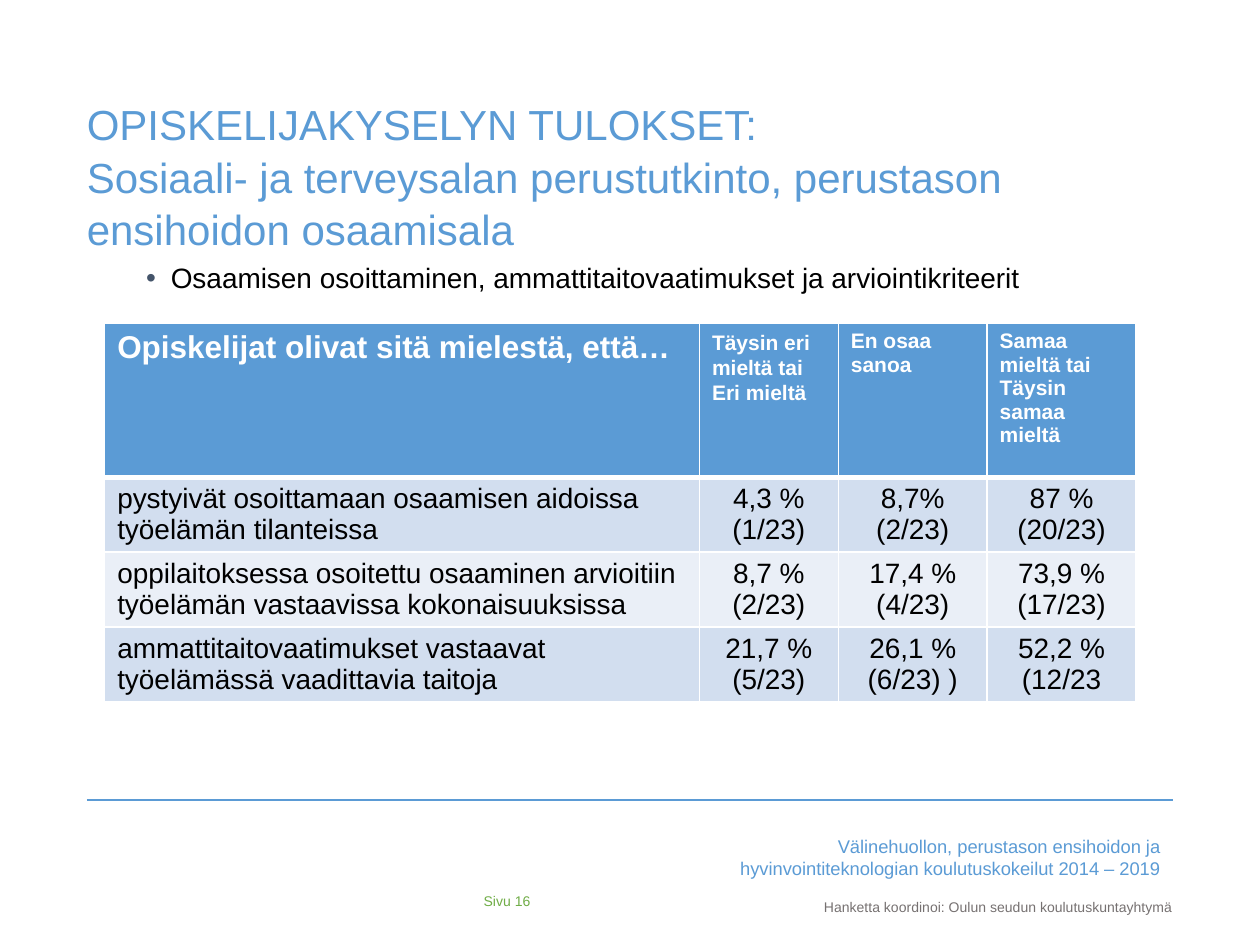
from lxml import etree
from pptx import Presentation
from pptx.dml.color import RGBColor
from pptx.enum.shapes import MSO_CONNECTOR
from pptx.enum.text import MSO_ANCHOR, MSO_AUTO_SIZE, PP_ALIGN
from pptx.oxml.ns import qn
from pptx.util import Cm, Pt

LEFT, CENTER, RIGHT = PP_ALIGN.LEFT, PP_ALIGN.CENTER, PP_ALIGN.RIGHT
TOP, MIDDLE = MSO_ANCHOR.TOP, MSO_ANCHOR.MIDDLE
STRAIGHT = MSO_CONNECTOR.STRAIGHT
NO_AUTOFIT = MSO_AUTO_SIZE.NONE

BLUE = RGBColor(0x5B, 0x9B, 0xD5)
BAND_DARK = RGBColor(0xD2, 0xDE, 0xEF)
BAND_LIGHT = RGBColor(0xEA, 0xEF, 0xF7)
BULLET_COLOR = RGBColor(0x44, 0x54, 0x6A)
GREEN = RGBColor(0x70, 0xAD, 0x47)
GREY = RGBColor(0x76, 0x71, 0x71)
BLACK = RGBColor(0, 0, 0)
WHITE = RGBColor(0xFF, 0xFF, 0xFF)

COLUMN_WIDTHS = (11.99, 2.8, 3, 3)
HEADER_HEIGHT, ROW_HEIGHT = 3.1, 1.51
HEADERS = (
    ["Opiskelijat olivat sitä mielestä, että…"],
    ["Täysin eri mieltä tai", "Eri mieltä"],
    ["En osaa sanoa"],
    ["Samaa mieltä tai Täysin samaa mieltä"],
)
ROWS = (
    ("pystyivät osoittamaan osaamisen aidoissa työelämän tilanteissa",
     "4,3 % (1/23)", "8,7% (2/23)", "87 % (20/23)"),
    ("oppilaitoksessa osoitettu osaaminen arvioitiin työelämän vastaavissa kokonaisuuksissa",
     "8,7 % (2/23)", "17,4 % (4/23)", "73,9 % (17/23)"),
    ("ammattitaitovaatimukset vastaavat työelämässä vaadittavia taitoja",
     "21,7 % (5/23)", "26,1 % (6/23) )", "52,2 % (12/23"),
)


def write_text(text_frame, *texts, size, color, bold=False, align=LEFT, spacing=1.0):
    """Write one paragraph per text, all in the same format."""
    for index, text in enumerate(texts):
        paragraph = text_frame.add_paragraph() if index else text_frame.paragraphs[0]
        paragraph.text = text
        paragraph.alignment = align
        paragraph.line_spacing = spacing
        paragraph.space_before = Pt(0)
        for run in paragraph.runs:
            run.font.name = "Arial"
            run.font.size = Pt(size)
            run.font.bold = bold
            run.font.color.rgb = color


def set_frame(text_frame, inset=None, anchor=TOP, wrap=True):
    text_frame.auto_size = NO_AUTOFIT
    text_frame.word_wrap = wrap
    text_frame.vertical_anchor = anchor
    if inset is not None:
        text_frame.margin_left = text_frame.margin_right = Cm(inset)
        text_frame.margin_top = text_frame.margin_bottom = Cm(inset)


def place(shape, left, top, width, height):
    shape.left, shape.top = Cm(left), Cm(top)
    shape.width, shape.height = Cm(width), Cm(height)


def add_label(slide, text, left, top, width, height, inset=None, anchor=TOP, wrap=True, **text_format):
    shape = slide.shapes.add_textbox(Cm(left), Cm(top), Cm(width), Cm(height))
    set_frame(shape.text_frame, inset, anchor, wrap)
    write_text(shape.text_frame, text, **text_format)


def add_rule(slide, left, right, top):
    line = slide.shapes.add_connector(STRAIGHT, Cm(left), Cm(top), Cm(right), Cm(top))
    line.line.color.rgb = BLUE
    line.line.width = Pt(1)
    etree.SubElement(line._element.spPr, qn("a:effectLst"))


def set_bullet(paragraph, character, color, indent):
    properties = paragraph._p.get_or_add_pPr()
    properties.set("marL", str(Cm(indent)))
    properties.set("indent", str(-Cm(indent)))
    bullet_color = etree.SubElement(properties, qn("a:buClr"))
    etree.SubElement(bullet_color, qn("a:srgbClr"), val=str(color))
    etree.SubElement(properties, qn("a:buFont"), typeface="Arial")
    etree.SubElement(properties, qn("a:buChar"), char=character)


def style_cell(cell, fill, top=1, bottom=1):
    """Give a cell white borders, widths in points, and a plain fill."""
    properties = cell._tc.get_or_add_tcPr()
    for side, width in (("L", 1), ("R", 1), ("T", top), ("B", bottom)):
        border = etree.SubElement(properties, qn(f"a:ln{side}"), w=str(Pt(width)))
        solid = etree.SubElement(border, qn("a:solidFill"))
        etree.SubElement(solid, qn("a:srgbClr"), val=str(WHITE))
    cell.fill.solid()
    cell.fill.fore_color.rgb = fill


def add_results_table(slide, left, top):
    height = HEADER_HEIGHT + ROW_HEIGHT * len(ROWS)
    table = slide.shapes.add_table(len(ROWS) + 1, len(HEADERS), Cm(left), Cm(top),
                                   Cm(sum(COLUMN_WIDTHS)), Cm(height)).table
    for column, width in zip(table.columns, COLUMN_WIDTHS):
        column.width = Cm(width)

    # Header row
    table.rows[0].height = Cm(HEADER_HEIGHT)
    for column, texts in enumerate(HEADERS):
        cell = table.cell(0, column)
        style_cell(cell, BLUE, bottom=3)
        write_text(cell.text_frame, *texts, size=12 if column else 18, color=WHITE,
                   bold=True, spacing=1.07 if len(texts) > 1 else 1.0)

    # Banded result rows
    for row, values in enumerate(ROWS, start=1):
        table.rows[row].height = Cm(ROW_HEIGHT)
        for column, value in enumerate(values):
            cell = table.cell(row, column)
            style_cell(cell, BAND_DARK if row % 2 else BAND_LIGHT, top=3 if row == 1 else 1)
            write_text(cell.text_frame, value, size=16, color=BLACK,
                       align=CENTER if column else LEFT)


def main():
    presentation = Presentation()
    presentation.slide_width, presentation.slide_height = Cm(25.4), Cm(19.05)
    slide = presentation.slides.add_slide(presentation.slide_layouts[1])

    # Title and bullet
    title, body = slide.placeholders
    place(title, 1.75, 1.93, 21.9, 3)
    set_frame(title.text_frame, inset=0)
    write_text(title.text_frame,
               "OPISKELIJAKYSELYN TULOKSET:\n"
               "Sosiaali- ja terveysalan perustutkinto, perustason ensihoidon osaamisala",
               size=24, color=BLUE, spacing=1.05)
    place(body, 2.69, 5.13, 20.96, 9.8)
    set_frame(body.text_frame)
    write_text(body.text_frame,
               "Osaamisen osoittaminen, ammattitaitovaatimukset ja arviointikriteerit",
               size=16, color=BLACK)
    set_bullet(body.text_frame.paragraphs[0], "•", BULLET_COLOR, 0.5)

    add_results_table(slide, 2.11, 6.52)

    # Footer
    add_rule(slide, 1.75, 23.65, 16.13)
    add_label(slide, "Välinehuollon, perustason ensihoidon ja "
              "hyvinvointiteknologian koulutuskokeilut 2014 – 2019",
              14.1, 16.71, 9.55, 1.17, size=10.5, color=BLUE, align=RIGHT)
    add_label(slide, "Hanketta koordinoi: Oulun seudun koulutuskuntayhtymä",
              16.51, 18.01, 7.32, 0.89, inset=0.1, wrap=False, size=8, color=GREY)
    add_label(slide, "Sivu 16", 9.75, 17.88, 3, 0.58, inset=0, anchor=MIDDLE,
              size=8, color=GREEN)

    presentation.save("out.pptx")


if __name__ == "__main__":
    main()
